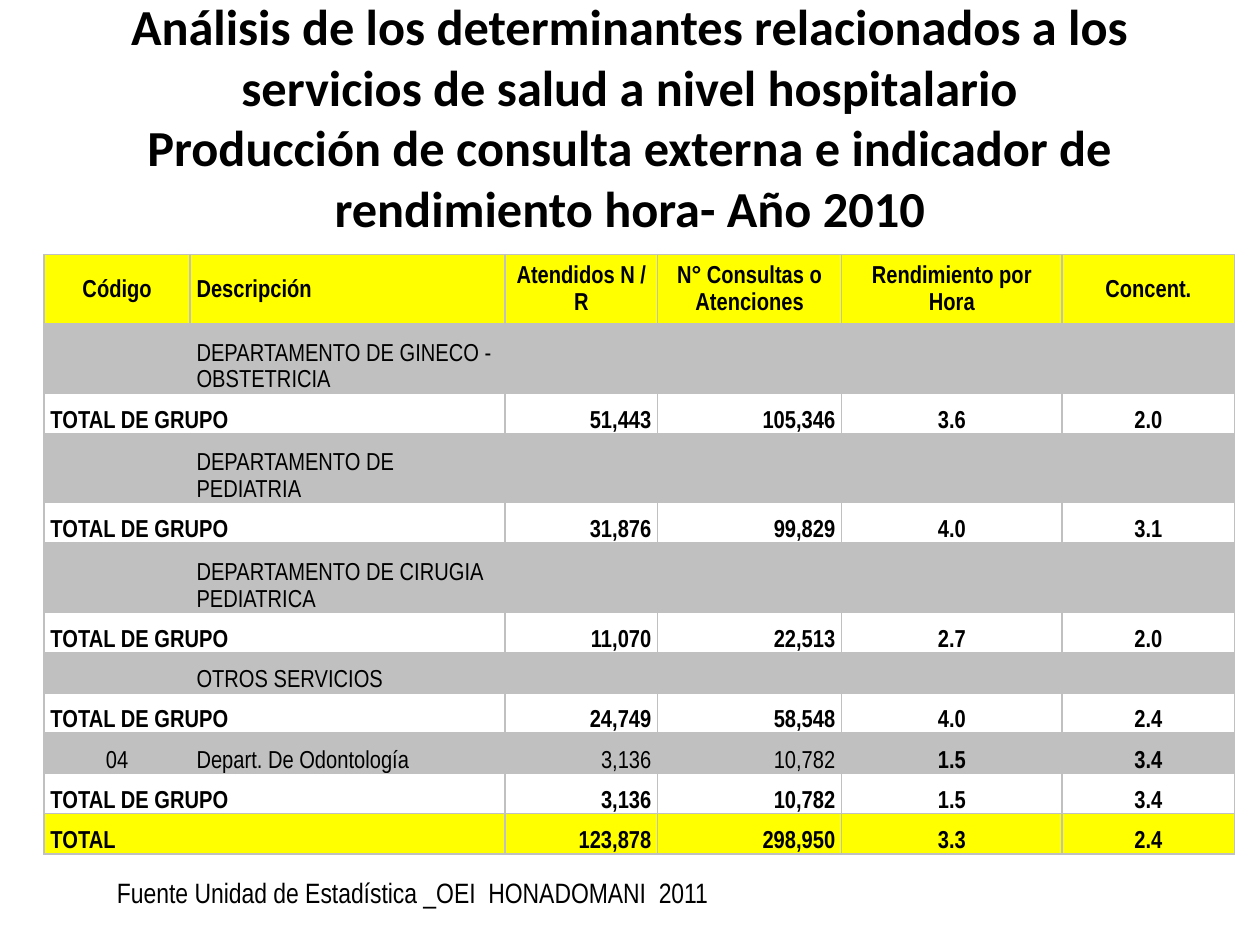
from lxml.etree import SubElement
from pptx import Presentation
from pptx.dml.color import RGBColor
from pptx.enum.text import MSO_ANCHOR, MSO_AUTO_SIZE, PP_ALIGN
from pptx.oxml.ns import qn
from pptx.util import Inches, Pt

BLACK = RGBColor(0x00, 0x00, 0x00)
YELLOW = RGBColor(0xFF, 0xFF, 0x00)
SILVER = RGBColor(0xC0, 0xC0, 0xC0)

TITLE = [
    "Análisis de los determinantes relacionados a los servicios de salud a nivel hospitalario",
    "Producción de consulta externa e indicador de rendimiento hora- Año 2010",
]
SOURCE = "Fuente Unidad de Estadística _OEI  HONADOMANI  2011"
HEADER = ["Código", "Descripción", "Atendidos N / R", "N° Consultas o Atenciones",
          "Rendimiento por Hora", "Concent."]
GROUPS = [
    (["", "DEPARTAMENTO DE GINECO - OBSTETRICIA", "", "", "", ""],
     ["51,443", "105,346", "3.6", "2.0"]),
    (["", "DEPARTAMENTO DE PEDIATRIA", "", "", "", ""],
     ["31,876", "99,829", "4.0", "3.1"]),
    (["", "DEPARTAMENTO DE CIRUGIA PEDIATRICA", "", "", "", ""],
     ["11,070", "22,513", "2.7", "2.0"]),
    (["", "OTROS SERVICIOS", "", "", "", ""],
     ["24,749", "58,548", "4.0", "2.4"]),
    (["04", "Depart. De Odontología", "3,136", "10,782", "1.5", "3.4"],
     ["3,136", "10,782", "1.5", "3.4"]),
]
GRAND_TOTAL = ["123,878", "298,950", "3.3", "2.4"]

COLUMN_WIDTHS = [1.16, 2.5, 1.21, 1.46, 1.75, 1.37]
TALL_ROW, SHORT_ROW = 0.55, 0.32
TWO_LINE_LENGTH = 23
CENTER, LEFT, RIGHT = PP_ALIGN.CENTER, PP_ALIGN.LEFT, PP_ALIGN.RIGHT
HEADER_ALIGNS = [CENTER, LEFT, CENTER, CENTER, CENTER, CENTER]
BODY_ALIGNS = [CENTER, LEFT, RIGHT, RIGHT, CENTER, CENTER]
TOTAL_ALIGNS = [LEFT] + BODY_ALIGNS[1:]


def add_span(para, text, font, size, bold=False):
    span = para.add_run()
    span.text = text
    span.font.name = font
    span.font.size = Pt(size)
    span.font.bold = bold
    span.font.color.rgb = BLACK


def add_borders(cell):
    properties = cell._tc.get_or_add_tcPr()
    for index, side in enumerate(("a:lnL", "a:lnR", "a:lnT", "a:lnB")):
        line = SubElement(properties, qn(side), w=str(Pt(1)))
        fill = SubElement(line, qn("a:solidFill"))
        SubElement(fill, qn("a:srgbClr"), val=str(SILVER))
        properties.insert(index, line)


def format_cell(cell, text, align, anchor, fill, bold):
    cell.margin_left = cell.margin_right = Inches(0.05)
    cell.margin_top = cell.margin_bottom = 0
    cell.vertical_anchor = anchor
    add_borders(cell)
    if fill is None:
        cell.fill.background()
    else:
        cell.fill.solid()
        cell.fill.fore_color.rgb = fill
    if text:
        para = cell.text_frame.paragraphs[0]
        para.alignment = align
        para.line_spacing = 1.15
        add_span(para, text, "Arial Narrow", 14, bold)


def table_rows():
    all_bold = [True] * 6
    rows = [(HEADER, HEADER_ALIGNS, YELLOW, all_bold, TALL_ROW)]
    for department, totals in GROUPS:
        height = TALL_ROW if len(department[1]) > TWO_LINE_LENGTH else SHORT_ROW
        rows.append((department, BODY_ALIGNS, SILVER, [False] * 4 + [True] * 2, height))
        rows.append((["TOTAL DE GRUPO", ""] + totals, TOTAL_ALIGNS, None, all_bold, SHORT_ROW))
    rows.append((["TOTAL", ""] + GRAND_TOTAL, TOTAL_ALIGNS, YELLOW, all_bold, SHORT_ROW))
    return rows


def add_title(page):
    title = page.shapes.title
    title.left, title.top = Inches(0.5), Inches(0.3)
    title.width, title.height = Inches(9), Inches(1.25)
    frame = title.text_frame
    frame.auto_size = MSO_AUTO_SIZE.NONE
    frame.vertical_anchor = MSO_ANCHOR.MIDDLE
    para = frame.paragraphs[0]
    para.alignment = CENTER
    for index, line in enumerate(TITLE):
        if index:
            para.add_line_break()
        add_span(para, line, "Calibri", 28.8, True)


def add_production_table(page):
    rows = table_rows()
    table = page.shapes.add_table(
        len(rows), len(COLUMN_WIDTHS), Inches(0.35), Inches(2.02),
        Inches(sum(COLUMN_WIDTHS)), Inches(sum(row[-1] for row in rows))).table
    table.first_row = table.horz_banding = False
    for column, width in zip(table.columns, COLUMN_WIDTHS):
        column.width = Inches(width)
    for row_index, (texts, aligns, fill, bolds, height) in enumerate(rows):
        table.rows[row_index].height = Inches(height)
        anchor = MSO_ANCHOR.BOTTOM if row_index else MSO_ANCHOR.MIDDLE
        for column_index, (text, align, bold) in enumerate(zip(texts, aligns, bolds)):
            format_cell(table.cell(row_index, column_index), text, align, anchor, fill, bold)
        if texts[0].startswith("TOTAL"):
            table.cell(row_index, 0).merge(table.cell(row_index, 1))


def add_source(page):
    box = page.shapes.add_textbox(Inches(0.83), Inches(6.9), Inches(4.99), Inches(0.37))
    frame = box.text_frame
    frame.word_wrap = False
    frame.auto_size = MSO_AUTO_SIZE.SHAPE_TO_FIT_TEXT
    frame.vertical_anchor = MSO_ANCHOR.MIDDLE
    para = frame.paragraphs[0]
    para.alignment = PP_ALIGN.JUSTIFY
    add_span(para, SOURCE, "Arial Narrow", 16)


def main():
    deck = Presentation()
    deck.slide_width, deck.slide_height = Inches(10), Inches(7.5)
    page = deck.slides.add_slide(deck.slide_layouts[5])
    add_title(page)
    add_production_table(page)
    add_source(page)
    deck.save("out.pptx")


if __name__ == "__main__":
    main()
